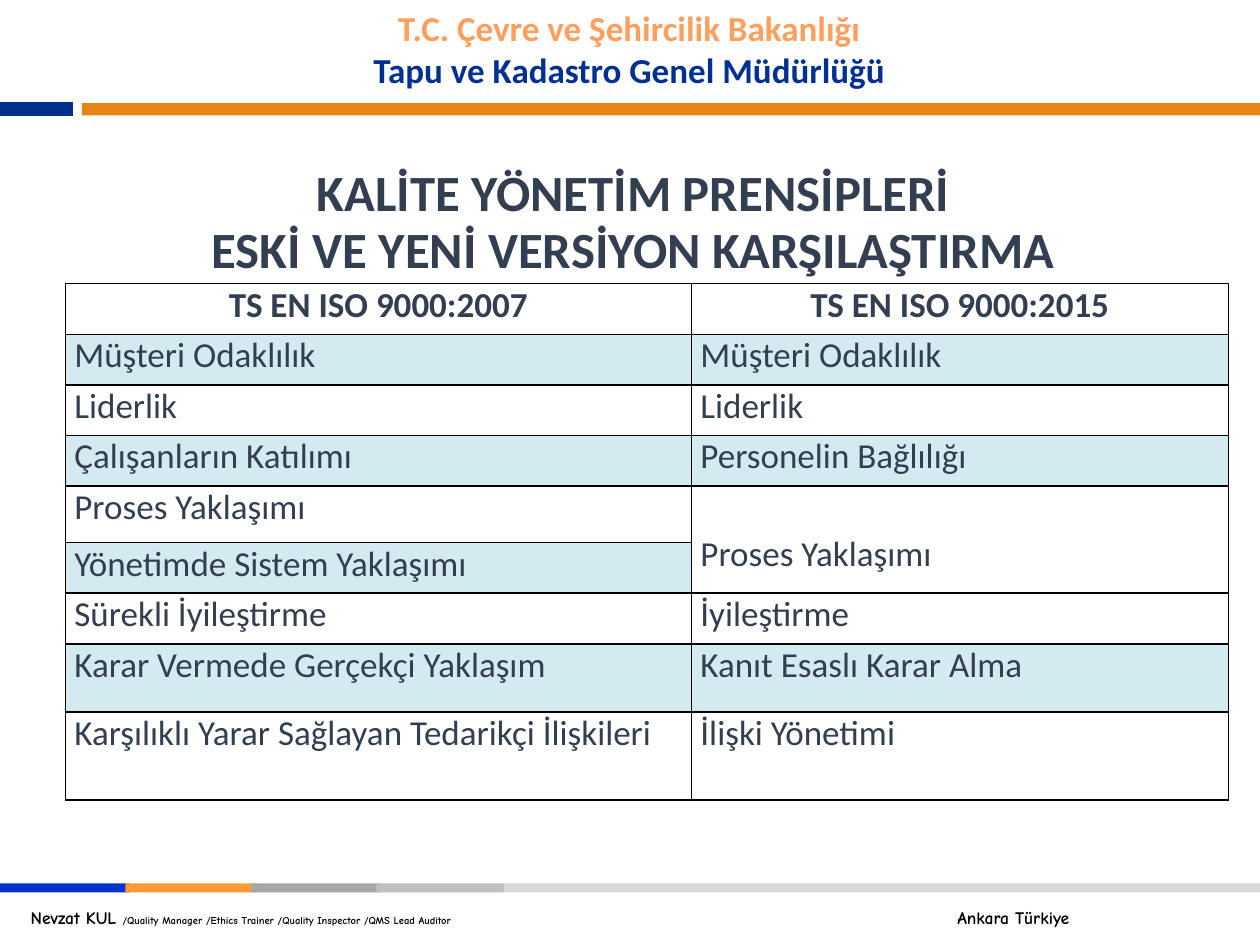
from lxml import etree
from pptx import Presentation
from pptx.dml.color import RGBColor
from pptx.enum.shapes import MSO_SHAPE
from pptx.enum.text import PP_ALIGN
from pptx.oxml.ns import qn
from pptx.util import Cm, Pt

RECTANGLE = MSO_SHAPE.RECTANGLE
LEFT, CENTER = PP_ALIGN.LEFT, PP_ALIGN.CENTER

COLORS = {
    "navy": "002F8E", "orange": "E88416", "peach": "FF9F5D", "ministry": "003192",
    "blue": "0033CC", "amber": "FF9933", "gray": "A6A6A6", "silver": "BFBFBF",
    "light": "D9D9D9", "slate": "333E50", "band": "D2EAF0", "black": "000000",
}
PAGE_WIDTH, PAGE_HEIGHT = 25.4, 19.05
COLUMN_WIDTHS = [12.62, 10.82]
ROW_HEIGHTS = [1.02, 1.02, 1.02, 1.02, 1.14, 1.02, 1.02, 1.37, 1.78]
MERGED_ROW = 4
PRINCIPLES = [
    ("TS EN ISO 9000:2007", "TS EN ISO 9000:2015"),
    ("Müşteri Odaklılık", "Müşteri Odaklılık"),
    ("Liderlik", "Liderlik"),
    ("Çalışanların Katılımı", "Personelin Bağlılığı"),
    ("Proses Yaklaşımı", "Proses Yaklaşımı"),
    ("Yönetimde Sistem Yaklaşımı", None),
    ("Sürekli İyileştirme", "İyileştirme"),
    ("Karar Vermede Gerçekçi Yaklaşım", "Kanıt Esaslı Karar Alma"),
    ("Karşılıklı Yarar Sağlayan Tedarikçi İlişkileri", "İlişki Yönetimi"),
]


def rgb(name):
    return RGBColor.from_string(COLORS[name])


class SlideBuilder:
    def __init__(self, page, font="Calibri"):
        self.page = page
        self.font = font

    def style(self, para, size, color, bold=True, align=LEFT, font=None):
        para.alignment = align
        para.font.name = font or self.font
        para.font.size = Pt(size)
        para.font.bold = bold
        para.font.color.rgb = rgb(color)

    def bar(self, left, top, width, height, color):
        shape = self.page.shapes.add_shape(
            RECTANGLE, Cm(left), Cm(top), Cm(width), Cm(height))
        shape.shadow.inherit = False
        shape.fill.solid()
        shape.fill.fore_color.rgb = rgb(color)
        shape.line.fill.background()

    def text_box(self, left, top, width, height, margins=(0.25, 0.13)):
        box = self.page.shapes.add_textbox(Cm(left), Cm(top), Cm(width), Cm(height))
        frame = box.text_frame
        frame.word_wrap = True
        frame.margin_left = frame.margin_right = Cm(margins[0])
        frame.margin_top = frame.margin_bottom = Cm(margins[1])
        return frame

    def centered_lines(self, frame, lines, size, spacing=None):
        """Fill the frame with (text, color) lines."""
        for index, (text, color) in enumerate(lines):
            para = frame.add_paragraph() if index else frame.paragraphs[0]
            para.text = text
            if spacing:
                para.line_spacing = Pt(spacing)
            self.style(para, size, color, align=CENTER)

    def footer(self, spans, tab):
        """Write (text, size) spans in one line; a tab character jumps to the tab stop."""
        frame = self.text_box(0, 18.16, PAGE_WIDTH, 0.69, (0.62, 0.13))
        para = frame.paragraphs[0]
        stops = etree.SubElement(para._p.get_or_add_pPr(), qn("a:tabLst"))
        etree.SubElement(stops, qn("a:tab"), pos=str(Cm(tab)), algn="l")
        self.style(para, 10, "black", font="Comic Neue")
        for text, size in spans:
            span = para.add_run()
            span.text = text
            span.font.size = Pt(size)

    def border(self, cell):
        properties = cell._tc.get_or_add_tcPr()
        for index, side in enumerate(("lnL", "lnR", "lnT", "lnB")):
            line = etree.Element(qn(f"a:{side}"), w=str(Pt(1)))
            fill = etree.SubElement(line, qn("a:solidFill"))
            etree.SubElement(fill, qn("a:srgbClr"), val=COLORS["black"])
            properties.insert(index, line)

    def cell(self, cell, text, header, banded):
        cell.margin_left = Cm(0 if header else 0.18)
        cell.margin_right = cell.margin_bottom = cell.margin_top = 0
        if banded:
            cell.fill.solid()
            cell.fill.fore_color.rgb = rgb("band")
        else:
            cell.fill.background()
        self.border(cell)
        if text:
            para = cell.text_frame.paragraphs[0]
            para.text = text
            self.style(para, 20, "slate", header, CENTER if header else LEFT)

    def table(self, left, top, rows):
        table = self.page.shapes.add_table(
            len(rows), len(COLUMN_WIDTHS), Cm(left), Cm(top),
            Cm(sum(COLUMN_WIDTHS)), Cm(sum(ROW_HEIGHTS))).table
        for column, width in zip(table.columns, COLUMN_WIDTHS):
            column.width = Cm(width)
        for row, (texts, height) in enumerate(zip(rows, ROW_HEIGHTS)):
            table.rows[row].height = Cm(height)
            for column, text in enumerate(texts):
                banded = row % 2 == 1 and text is not None
                self.cell(table.cell(row, column), text, row == 0, banded)
        merged = table.cell(MERGED_ROW, 1)
        merged.merge(table.cell(MERGED_ROW + 1, 1))
        merged.margin_top = Cm(0.94)


def main():
    deck = Presentation()
    deck.slide_width, deck.slide_height = Cm(PAGE_WIDTH), Cm(PAGE_HEIGHT)
    builder = SlideBuilder(deck.slides.add_slide(deck.slide_layouts[6]))

    builder.bar(0, 2.06, 1.47, 0.28, "navy")
    builder.bar(1.65, 2.08, 23.75, 0.25, "orange")
    builder.centered_lines(builder.text_box(5.05, 0, 15.27, 1.96), [
        ("T.C. Çevre ve Şehircilik Bakanlığı", "peach"),
        ("Tapu ve Kadastro Genel Müdürlüğü", "ministry"),
    ], 20)

    for index, color in enumerate(("blue", "amber", "gray", "silver")):
        builder.bar(index * 2.53, 17.81, 2.62, 0.18, color)
    builder.bar(10.16, 17.81, 15.24, 0.18, "light")
    builder.footer([
        ("Nevzat KUL ", 10),
        ("/Quality Manager /Ethics Trainer /Quality Inspector /QMS Lead Auditor", 6),
        ("\tAnkara Türkiye", 10),
    ], 18.68)

    builder.centered_lines(builder.text_box(4.24, 3.3, 17.07, 2.41, (0, 0)), [
        ("KALİTE YÖNETİM PRENSİPLERİ", "slate"),
        ("ESKİ VE YENİ VERSİYON KARŞILAŞTIRMA", "slate"),
    ], 29, 33)
    builder.table(1.32, 5.72, PRINCIPLES)
    deck.save("out.pptx")


if __name__ == "__main__":
    main()
